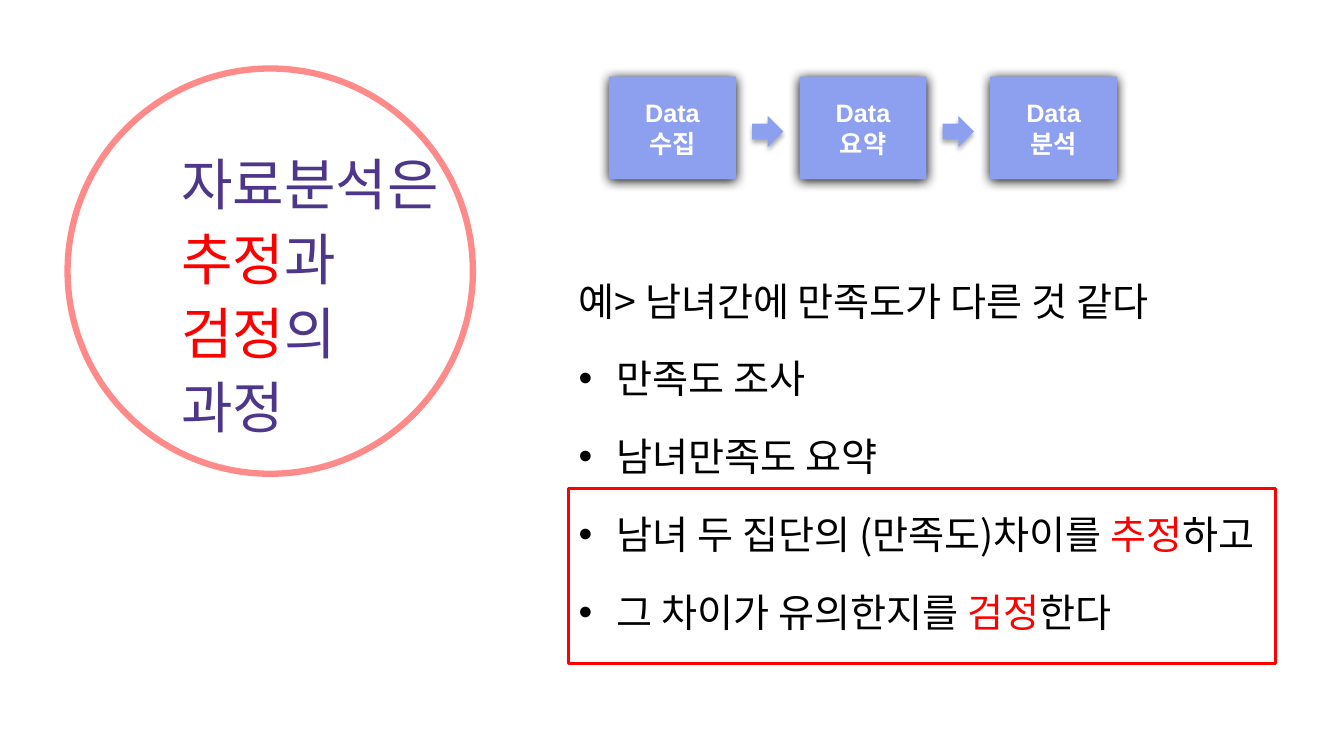
from lxml import etree
from pptx import Presentation
from pptx import util as u
from pptx.dml.color import RGBColor
from pptx.enum import shapes, text
from pptx.oxml import ns

PX = 9144  # 100 px to the inch
RED = RGBColor(0xFF, 0x00, 0x00)
PURPLE = RGBColor(0x4E, 0x36, 0x8A)
BLUE = RGBColor(0x8D, 0xA0, 0xEF)
BLACK = RGBColor(0x00, 0x00, 0x00)
WHITE = RGBColor(0xFF, 0xFF, 0xFF)
KOREAN = "Noto Sans CJK KR"
LATIN = "Arial"


def child(parent, tag, **attrs):
    el = etree.SubElement(parent, ns.qn(tag))
    for key, value in attrs.items():
        el.set(key, str(value))
    return el


class Deck:
    def __init__(self, width, height):
        self.prs = Presentation()
        self.prs.slide_width, self.prs.slide_height = width * PX, height * PX
        self.s = self.prs.slides.add_slide(self.prs.slide_layouts[5])

    def run(self, p, words, size, color, font=KOREAN, bold=False):
        r = p.add_run()
        r.text = words
        r.font.size, r.font.name, r.font.bold = u.Pt(size), font, bold
        r.font.color.rgb = color
        if font == KOREAN:
            child(r.font._element, "a:ea", typeface=font)

    def title(self, x, y, w, h, lines, size, pitch):
        sp = self.s.shapes.title
        sp.left, sp.top, sp.width, sp.height = (v * PX for v in (x, y, w, h))
        tf = sp.text_frame
        tf.word_wrap, tf.auto_size = True, text.MSO_AUTO_SIZE.NONE
        tf.vertical_anchor = text.MSO_ANCHOR.MIDDLE
        p = tf.paragraphs[0]
        p.alignment, p.line_spacing = text.PP_ALIGN.LEFT, u.Pt(pitch)
        for i, line in enumerate(lines):
            if i:
                p.add_line_break()
            for words, color in line:
                self.run(p, words, size, color)

    def bullets(self, x, y, w, h, items, size, pitch, before, indent):
        sp = self.s.shapes.add_textbox(*(v * PX for v in (x, y, w, h)))
        tf = sp.text_frame
        tf.word_wrap = True
        for i, (bulleted, runs) in enumerate(items):
            p = tf.add_paragraph() if i else tf.paragraphs[0]
            p.line_spacing, p.space_before = u.Pt(pitch), u.Pt(before)
            pPr = p._p.get_or_add_pPr()
            pPr.set("marL", str(indent * PX))
            pPr.set("indent", str(-indent * PX))
            if bulleted:
                child(pPr, "a:buFont", typeface=LATIN)
                child(pPr, "a:buChar", char="•")
            for words, color in runs:
                self.run(p, words, size, color)

    def shape(self, kind, x, y, w, h, fill=None, line=None, weight=0, alpha=100):
        sp = self.s.shapes.add_shape(kind, *(v * PX for v in (x, y, w, h)))
        sp.shadow.inherit = False
        if fill is None:
            sp.fill.background()
        else:
            sp.fill.solid()
            sp.fill.fore_color.rgb = fill
        if line is None:
            sp.line.fill.background()
        else:
            sp.line.color.rgb, sp.line.width = line, u.Pt(weight)
            if alpha < 100:
                clr = sp.line._ln.find(".//" + ns.qn("a:srgbClr"))
                child(clr, "a:alpha", val=alpha * 1000)
        return sp

    def shadow(self, sp, alpha, blur, dist):
        effects = sp._element.spPr.find(ns.qn("a:effectLst"))
        outer = child(effects, "a:outerShdw", blurRad=u.Pt(blur), dist=u.Pt(dist),
                      dir=90 * 60000, rotWithShape=0)
        clr = child(outer, "a:srgbClr", val=BLACK)
        child(clr, "a:alpha", val=alpha * 1000)

    def step(self, x, y, w, h, lines):
        sp = self.shape(shapes.MSO_SHAPE.RECTANGLE, x, y, w, h, fill=BLUE)
        self.shadow(sp, 100, 8.5, 1)
        tf = sp.text_frame
        tf.vertical_anchor = text.MSO_ANCHOR.MIDDLE
        for i, words in enumerate(lines):
            p = tf.add_paragraph() if i else tf.paragraphs[0]
            p.alignment = text.PP_ALIGN.CENTER
            self.run(p, words, 18, WHITE, LATIN, True)

    def arrow(self, x, y, size):
        sp = self.shape(shapes.MSO_SHAPE.RIGHT_ARROW, x, y, size, size, fill=BLUE)
        self.shadow(sp, 32, 3.5, 2.2)


def main():
    deck = Deck(1333, 750)

    # Title and example
    deck.title(170, 92, 331, 394, [
        [("자료분석은 ", PURPLE)],
        [("추정", RED), ("과 ", PURPLE)],
        [("검정", RED), ("의 ", PURPLE)],
        [("과정", PURPLE)],
    ], size=40, pitch=53)
    deck.bullets(564, 247, 717, 460, [
        (False, [("예> 남녀간에 만족도가 다른 것 같다", BLACK)]),
        (True, [("만족도 조사", BLACK)]),
        (True, [("남녀만족도 요약", BLACK)]),
        (True, [("남녀 두 집단의 (만족도)차이를 ", BLACK), ("추정", RED), ("하고", BLACK)]),
        (True, [("그 차이가 유의한지를 ", BLACK), ("검정", RED), ("한다", BLACK)]),
    ], size=28, pitch=50, before=5.6, indent=38)

    # Ring around the title
    deck.shape(shapes.MSO_SHAPE.OVAL, 67, 68, 402, 402, line=RED, weight=4.5, alpha=45)

    # Process: steps, then the arrows centred in the gaps
    left, top, width, height, gap, size = 604, 76, 126, 102, 63, 31
    steps = ["수집", "요약", "분석"]
    for i, name in enumerate(steps):
        deck.step(left + i * (width + gap), top, width, height, ["Data", name])
    for i in range(len(steps) - 1):
        x = left + width + i * (width + gap) + (gap - size) // 2
        deck.arrow(x, top + (height - size + 8) // 2, size)

    # Frame around the estimation step
    deck.shape(shapes.MSO_SHAPE.RECTANGLE, 564, 485, 701, 173, line=RED, weight=2)

    deck.prs.save("out.pptx")


if __name__ == "__main__":
    main()
